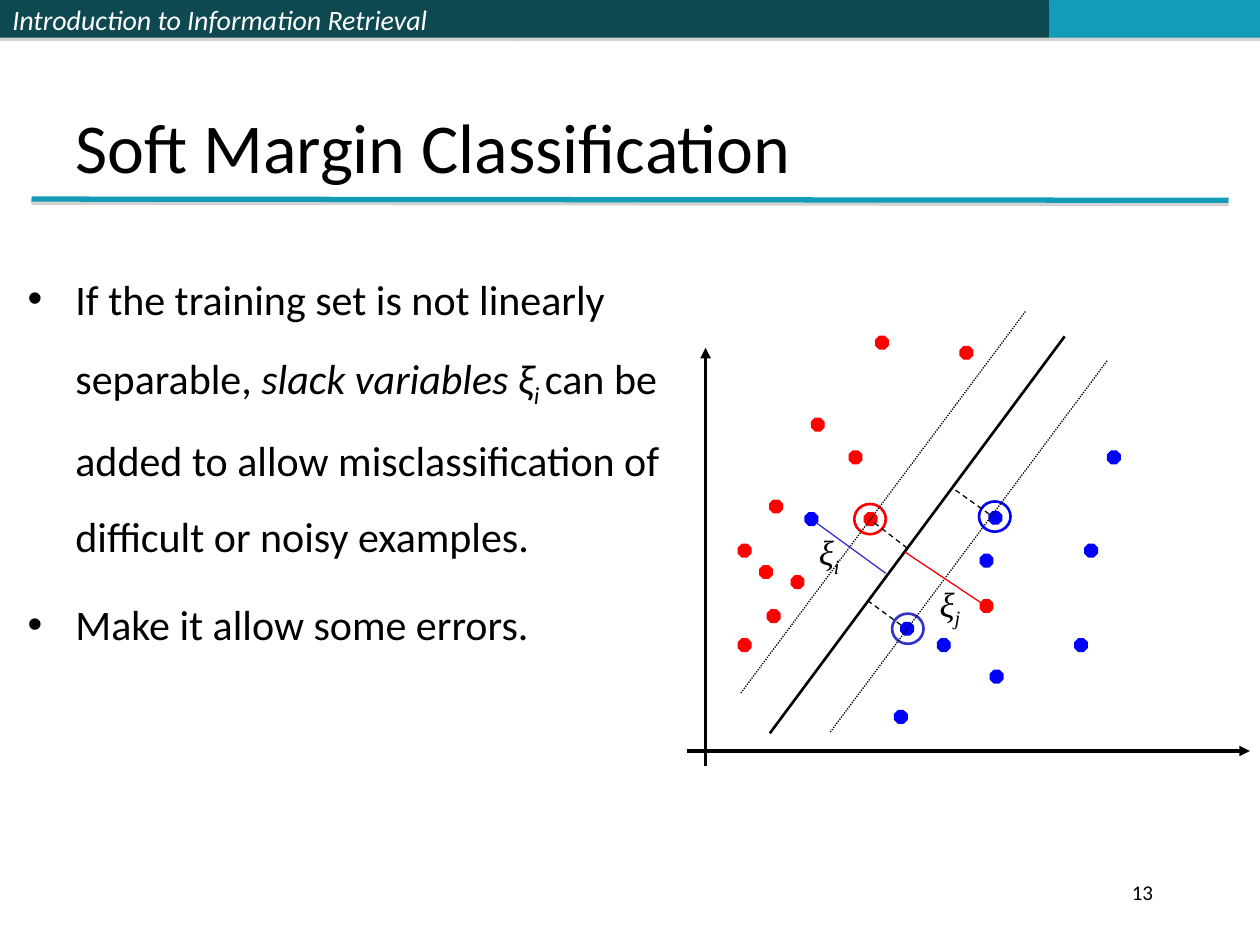
from lxml import etree
from pptx import Presentation
from pptx.dml.color import RGBColor
from pptx.enum import dml, shapes, text
from pptx.oxml import ns
from pptx.util import Inches, Pt

BLACK = RGBColor(0, 0, 0)
WHITE = RGBColor(255, 255, 255)
DARK_TEAL = RGBColor(0x0E, 0x48, 0x51)
TEAL = RGBColor(0x13, 0x9C, 0xB7)
RED = RGBColor(255, 0, 0)
BLUE = RGBColor(0, 0, 255)
INDIGO = RGBColor(0x33, 0x33, 0xCC)


def write(paragraph, words, size=24, font="Calibri", color=BLACK, italic=False, baseline=0):
    run = paragraph.add_run()
    run.text = words
    run.font.size = Pt(size)
    run.font.name = font
    run.font.color.rgb = color
    run.font.italic = italic
    if baseline:
        run.font._element.set("baseline", str(baseline * 1000))


def draw_line(start, end, color=BLACK, width=0.75, dash=None, arrow=False):
    line = slide.shapes.add_connector(
        shapes.MSO_CONNECTOR.STRAIGHT, *[Inches(v) for v in (*start, *end)])
    line.line.color.rgb = color
    line.line.width = Pt(width)
    if dash:
        line.line.dash_style = dash
    if arrow:
        etree.SubElement(line.line._get_or_add_ln(), ns.qn("a:tailEnd"), type="triangle")
    etree.SubElement(line._element.spPr, ns.qn("a:effectLst"))
    return line


prs = Presentation()
prs.slide_width, prs.slide_height = Inches(10), Inches(7.5)
slide = prs.slides.add_slide(prs.slide_layouts[5])

# Header band and the rule under the title, all with a soft shadow
shadowed = []
for left, width, color in ((0, 4.08, DARK_TEAL), (4.08, 4.25, DARK_TEAL), (8.33, 1.67, TEAL)):
    band = slide.shapes.add_shape(
        shapes.MSO_SHAPE.RECTANGLE, Inches(left), 0, Inches(width), Inches(0.3))
    band.fill.solid()
    band.fill.fore_color.rgb = color
    band.line.fill.background()
    band.shadow.inherit = False
    shadowed.append(band)
course = shadowed[0].text_frame
course.vertical_anchor = text.MSO_ANCHOR.MIDDLE
course.paragraphs[0].alignment = text.PP_ALIGN.LEFT
write(course.paragraphs[0], "Introduction to Information Retrieval", size=16, color=WHITE, italic=True)

shadowed.append(draw_line((0.25, 1.58), (9.75, 1.59), TEAL, 3))
for part in shadowed:
    effects = part._element.spPr.find(ns.qn("a:effectLst"))
    shadow = etree.SubElement(effects, ns.qn("a:outerShdw"), dist=str(Pt(1.8)), dir="5400000")
    shade = etree.SubElement(shadow, ns.qn("a:srgbClr"), val="808080")
    etree.SubElement(shade, ns.qn("a:alpha"), val="35000")

# Title
title = slide.shapes.title
title.left, title.top, title.width, title.height = [Inches(v) for v in (0.5, 0.11, 8.99, 1.43)]
title.text_frame.vertical_anchor = text.MSO_ANCHOR.BOTTOM
title.text_frame.paragraphs[0].alignment = text.PP_ALIGN.LEFT
write(title.text_frame.paragraphs[0], "Soft Margin Classification", size=40)

# Bullets
bullets = slide.shapes.add_textbox(Inches(0.12), Inches(1.92), Inches(5.28), Inches(5.33)).text_frame
bullets.word_wrap = True
slack, errors = bullets.paragraphs[0], bullets.add_paragraph()
for item in (slack, errors):
    item.line_spacing = 1.5
    item.space_before = Pt(7)
    props = item._p.get_or_add_pPr()
    props.set("marL", str(Inches(0.38)))
    props.set("indent", str(-Inches(0.38)))
    etree.SubElement(props, ns.qn("a:buFont"), typeface="Arial")
    etree.SubElement(props, ns.qn("a:buChar"), char="•")
write(slack, "If the training set is not linearly separable, ")
write(slack, "slack variables ξ", italic=True)
write(slack, "i ", italic=True, baseline=-25)
write(slack, "can be added to allow misclassification of difficult or noisy examples.")
write(errors, "Make it allow some errors.")

# Axes
draw_line((5.6, 6.08), (5.6, 2.76), width=2, arrow=True)
draw_line((5.45, 5.96), (9.92, 5.96), width=2, arrow=True)

# Data points of both classes
red_points = [(6.74, 3.58), (6.11, 3.97), (6.28, 4.57), (5.86, 5.07), (6.44, 3.32), (5.86, 4.32),
              (6.03, 4.49), (6.86, 4.07), (6.95, 2.67), (7.62, 2.75), (6.09, 4.84), (7.78, 4.76)]
blue_points = [(7.85, 4.06), (7.44, 5.07), (8.53, 5.07), (7.1, 5.64), (7.78, 4.4), (7.15, 4.94),
               (7.86, 5.32), (8.61, 4.32), (8.79, 3.58), (6.39, 4.07)]
for color, points in ((RED, red_points), (BLUE, blue_points)):
    for left, top in points:
        point = slide.shapes.add_shape(
            shapes.MSO_SHAPE.OCTAGON, Inches(left), Inches(top), Inches(0.1), Inches(0.1))
        point.fill.solid()
        point.fill.fore_color.rgb = color
        point.line.color.rgb = color
        point.line.width = Pt(0.75)
        point.shadow.inherit = False

# Rings around the support vectors
for left, top, color in ((6.78, 4, RED), (7.08, 4.87, INDIGO), (7.77, 3.98, BLUE)):
    ring = slide.shapes.add_shape(
        shapes.MSO_SHAPE.OVAL, Inches(left), Inches(top), Inches(0.25), Inches(0.24))
    ring.fill.background()
    ring.line.color.rgb = color
    ring.line.width = Pt(1.5)
    ring.shadow.inherit = False

# Separator, margins, distances to the support vectors, slacks
draw_line((6.11, 5.82), (8.45, 2.67), width=1.5)
for start, end in (((6.59, 5.81), (8.79, 2.86)), ((5.88, 5.5), (8.14, 2.47))):
    draw_line(start, end, dash=dml.MSO_LINE.ROUND_DOT)
for start, end in (((7.85, 4.08), (7.57, 3.88)), ((7.15, 4.96), (6.89, 4.77)), ((7.2, 4.35), (6.94, 4.15))):
    draw_line(start, end, dash=dml.MSO_LINE.DASH)
draw_line((7.78, 4.78), (7.18, 4.38), RED)
draw_line((6.48, 4.15), (7.03, 4.55), INDIGO)

# Slack labels
for left, top, index in ((7.36, 4.57, "j"), (6.4, 4.16, "i")):
    label = slide.shapes.add_textbox(Inches(left), Inches(top), Inches(0.77), Inches(0.43)).text_frame
    label.word_wrap = True
    write(label.paragraphs[0], "ξ", size=20, font="Times New Roman", italic=True)
    write(label.paragraphs[0], index, size=20, font="Times New Roman", italic=True, baseline=-25)

# Slide number
number = slide.shapes.add_textbox(Inches(7.17), Inches(6.83), Inches(2.08), Inches(0.5)).text_frame
number.word_wrap = True
number.vertical_anchor = text.MSO_ANCHOR.MIDDLE
number.paragraphs[0].alignment = text.PP_ALIGN.RIGHT
write(number.paragraphs[0], "13", size=12)

prs.save("out.pptx")
